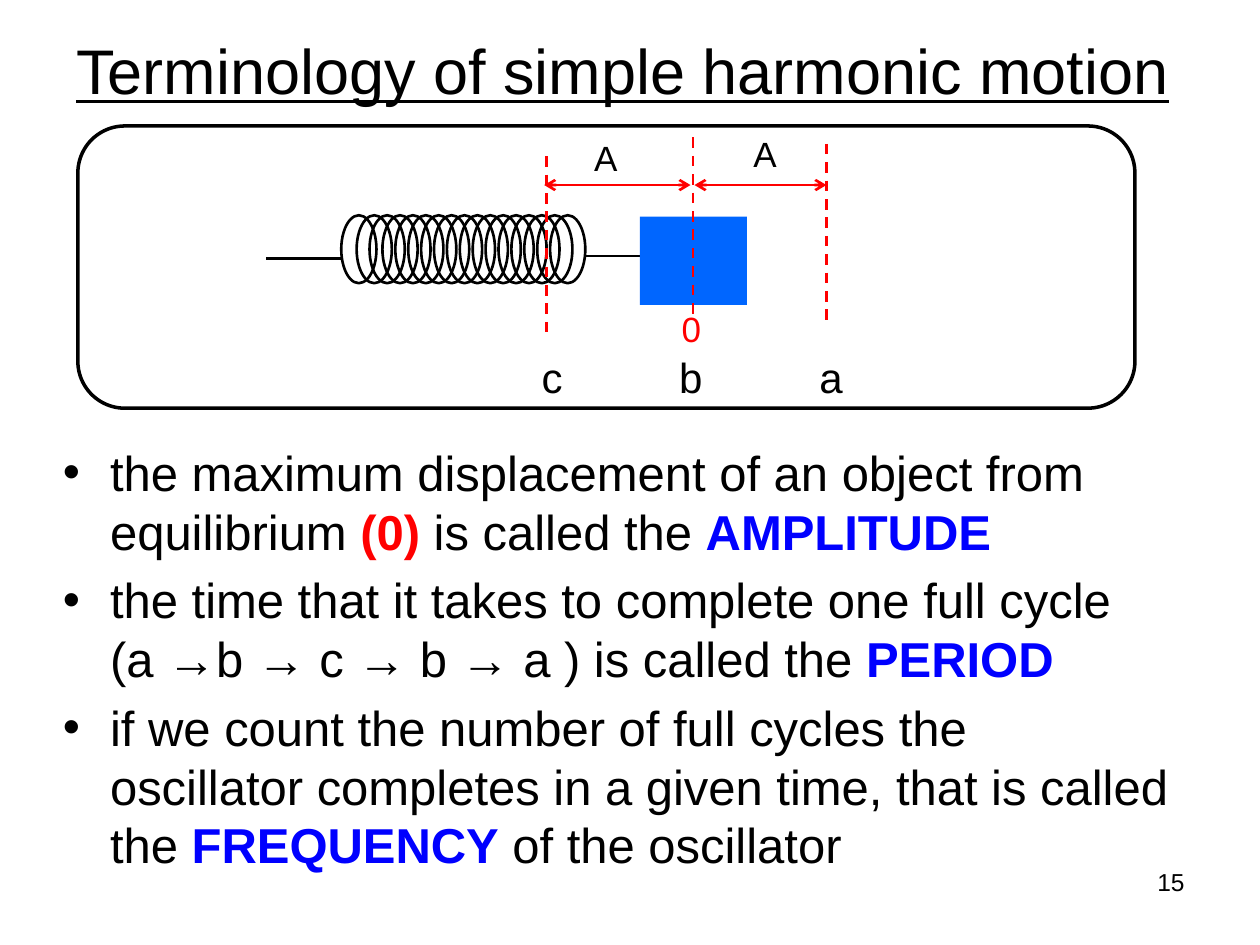
from typing import NamedTuple

from lxml.etree import SubElement
from pptx import Presentation
from pptx.dml.color import RGBColor
from pptx.enum.dml import MSO_LINE as Dash
from pptx.enum.shapes import MSO_CONNECTOR as Link, MSO_SHAPE as Form
from pptx.enum.text import MSO_ANCHOR as Anchor, PP_ALIGN as Align
from pptx.oxml.ns import qn
from pptx.util import Cm, Pt

BLACK, RED, BLUE, BLOCK = "000000", "FF0000", "0000FF", "0066FF"


class Run(NamedTuple):
    text: str
    color: str = BLACK
    bold: bool = False


class Box(NamedTuple):
    left: float
    top: float
    width: float
    height: float


class Line(NamedTuple):
    x1: float
    y1: float
    x2: float
    y2: float
    color: str = BLACK
    dash: bool = False
    arrows: bool = False


def rgb(color: str) -> RGBColor:
    return RGBColor.from_string(color)


def add_text(slide, box: Box, *paras: list[Run], size: int = 20, align=Align.LEFT,
             anchor=Anchor.TOP, wrap: bool = True, under: bool = False,
             inset: bool = True, bullet: bool = False, tabs: tuple = ()) -> None:
    frame = slide.shapes.add_textbox(*map(Cm, box)).text_frame
    frame.word_wrap, frame.vertical_anchor = wrap, anchor
    if not inset:
        frame.margin_left = frame.margin_right = 0
        frame.margin_top = frame.margin_bottom = 0
    for i, runs in enumerate(paras):
        para = frame.add_paragraph() if i else frame.paragraphs[0]
        para.alignment = align
        props = para._p.get_or_add_pPr()
        if bullet:
            para.space_before = Pt(size * 0.2)
            props.set("marL", str(Cm(0.95)))
            props.set("indent", str(-Cm(0.95)))
            SubElement(props, qn("a:buFont"), typeface="Arial")
            SubElement(props, qn("a:buChar"), char="•")
        if tabs:
            stops = SubElement(props, qn("a:tabLst"))
            for pos in tabs:
                SubElement(stops, qn("a:tab"), pos=str(Cm(pos)), algn="l")
        for item in runs:
            for j, part in enumerate(item.text.split("\n")):
                if j:
                    para.add_line_break()
                run = para.add_run()
                run.text = part
                font = run.font
                font.name, font.size = "Arial", Pt(size)
                font.bold, font.underline = item.bold, under
                font.color.rgb = rgb(item.color)


def add_form(slide, form: Form, box: Box, fill: str = "", line: float = 0) -> None:
    shape = slide.shapes.add_shape(form, *map(Cm, box))
    shape.shadow.inherit = False
    if fill:
        shape.fill.solid()
        shape.fill.fore_color.rgb = rgb(fill)
    else:
        shape.fill.background()
    if line:
        shape.line.color.rgb = rgb(BLACK)
        shape.line.width = Pt(line)
    else:
        shape.line.fill.background()


def add_line(slide, spec: Line) -> None:
    link = slide.shapes.add_connector(Link.STRAIGHT, *map(Cm, spec[:4]))
    link.line.color.rgb = rgb(spec.color)
    link.line.width = Pt(1.5)
    if spec.dash:
        link.line.dash_style = Dash.DASH
    if spec.arrows:
        for end in ("a:headEnd", "a:tailEnd"):
            SubElement(link.line._get_or_add_ln(), qn(end), type="arrow")
    SubElement(link._element.spPr, qn("a:effectLst"))


def main() -> None:
    deck = Presentation()
    deck.slide_width, deck.slide_height = Cm(25.4), Cm(19.05)
    slide = deck.slides.add_slide(deck.slide_layouts[6])

    # Title and definitions
    add_text(slide, Box(-0.15, 0.25, 25.4, 2.31),
             [Run("Terminology of simple harmonic motion")],
             size=36, align=Align.CENTER, anchor=Anchor.MIDDLE, under=True)
    add_text(
        slide, Box(1.02, 8.79, 22.86, 9.14),
        [Run("the maximum displacement of an object from equilibrium "),
         Run("(0) ", RED, True), Run("is called the "), Run("AMPLITUDE", BLUE, True)],
        [Run("the time that it takes to complete one full cycle \n"
             "(a →b → c → b → a ) is called the "), Run("PERIOD", BLUE, True)],
        [Run("if we count the number of full cycles the oscillator completes "
             "in a given time, that is called the "),
         Run("FREQUENCY", BLUE, True), Run(" of the oscillator")],
        size=28, bullet=True)

    # Spring: an end coil, then evenly spaced coils
    for left in [6.88] + [7.19 + 0.26 * i for i in range(16)]:
        add_form(slide, Form.OVAL, Box(left, 4.34, 0.71, 1.37), line=1.5)

    # Wires, with the block over the right one
    add_line(slide, Line(6.88, 5.21, 5.36, 5.21))
    add_line(slide, Line(11.81, 5.16, 13.28, 5.16))
    add_form(slide, Form.RECTANGLE, Box(12.9, 4.37, 2.16, 1.78), fill=BLOCK)

    # Position markers
    for x, top in ((13.97, 2.77), (16.66, 2.9), (11.02, 3.15)):
        add_line(slide, Line(x, top, x, top + 3.56, RED, dash=True))

    # Amplitudes
    for start, end in ((14, 16.66), (13.92, 10.97)):
        add_line(slide, Line(start, 3.73, end, 3.73, RED, arrows=True))
    for left, top in ((14.94, 2.54), (11.73, 2.62)):
        add_text(slide, Box(left, top, 0.99, 1.09), [Run("A")], wrap=False)

    # Position names
    add_text(slide, Box(13.74, 6.2, 0.71, 0.84), [Run("0", RED)], inset=False)
    add_text(slide, Box(10.67, 6.96, 7.32, 1.3), [Run("c\tb\ta")],
             size=24, tabs=(2.77, 5.6))

    # Page number and diagram frame
    add_text(slide, Box(18.21, 17.35, 5.92, 1.32), [Run("15")],
             size=14, align=Align.RIGHT)
    add_form(slide, Form.ROUNDED_RECTANGLE, Box(1.57, 2.54, 21.31, 5.69), line=2)

    deck.save("out.pptx")


if __name__ == "__main__":
    main()
